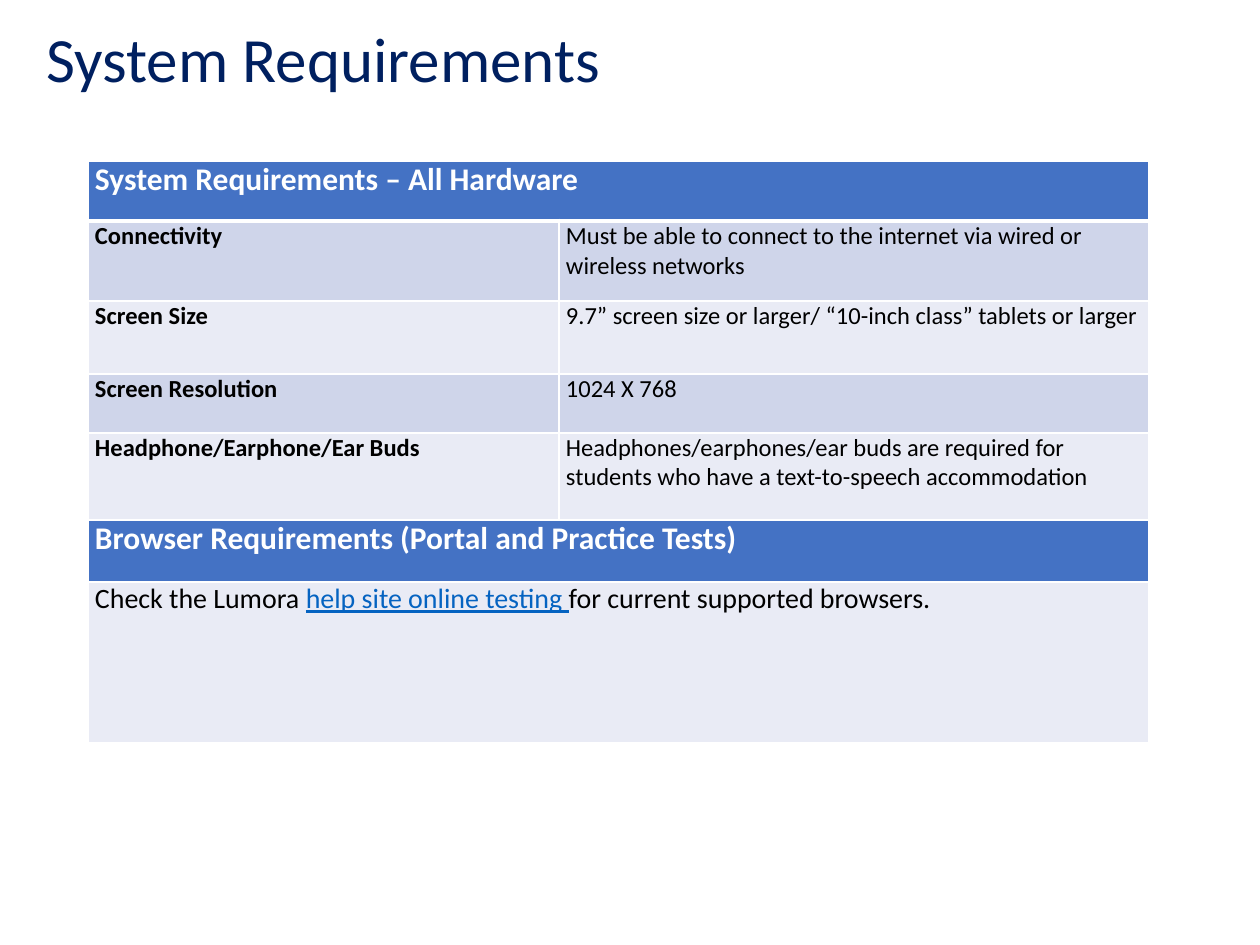
from lxml import etree
from pptx import Presentation
from pptx.dml.color import RGBColor
from pptx.oxml.ns import qn
from pptx.util import Emu, Pt

PX = 914400 // 126
FONT = "Calibri"
COLORS = {
    "navy": "002060", "head": "4472C4", "dark": "CFD5EA", "light": "E9EBF5",
    "white": "FFFFFF", "black": "000000", "link": "0563C1",
}

TITLE = "System Requirements"
HEAD = dict(size=18, color="white", bold=True)
LABEL = dict(size=14, bold=True)
VALUE = dict(size=14)
NOTE = dict(size=16)
LINK = dict(size=16, color="link", under=True)

# Each row: height, fill, cells; each cell is a list of (text, format) runs.
ROWS = [
    (60, "head", [[("System Requirements – All Hardware", HEAD)]]),
    (80, "dark", [[("Connectivity", LABEL)],
                  [("Must be able to connect to the internet via wired or "
                    "wireless networks", VALUE)]]),
    (73, "light", [[("Screen Size", LABEL)],
                   [("9.7” screen size or larger/ “10-inch class” tablets "
                     "or larger", VALUE)]]),
    (59, "dark", [[("Screen Resolution", LABEL)], [("1024 X 768", VALUE)]]),
    (87, "light", [[("Headphone/Earphone/Ear Buds", LABEL)],
                   [("Headphones/earphones/ear buds are required for students "
                     "who have a text-to-speech accommodation", VALUE)]]),
    (62, "head", [[("Browser Requirements (Portal and Practice Tests)", HEAD)]]),
    (161, "light", [[("Check the Lumora ", NOTE),
                     ("help site online testing ", LINK),
                     ("for current supported browsers.", NOTE)]]),
]
COLS = [471, 590]


def px(num):
    return Emu(num * PX)


def rgb(name):
    return RGBColor.from_string(COLORS[name])


def write(para, text, size=14, color="black", bold=False, under=False):
    run = para.add_run()
    run.text = text
    font = run.font
    font.name, font.size = FONT, Pt(size)
    font.bold, font.underline = bold, under
    font.color.rgb = rgb(color)


def edge(cell, widths):
    """Draw white borders, given widths in points for left, right, top, bottom."""
    props = cell._tc.get_or_add_tcPr()
    for spot, (side, width) in enumerate(zip("LRTB", widths)):
        line = etree.Element(qn(f"a:ln{side}"), w=str(Pt(width)))
        fill = etree.SubElement(line, qn("a:solidFill"))
        etree.SubElement(fill, qn("a:srgbClr"), val=COLORS["white"])
        props.insert(spot, line)


def add_title(slide):
    box = slide.shapes.add_textbox(px(34), px(13), px(966), px(89))
    box.text_frame.word_wrap = True
    write(box.text_frame.paragraphs[0], TITLE, size=36, color="navy")


def add_grid(slide):
    high = sum(row[0] for row in ROWS)
    table = slide.shapes.add_table(len(ROWS), len(COLS), px(88), px(161),
                                   px(sum(COLS)), px(high)).table
    for col, width in zip(table.columns, COLS):
        col.width = px(width)
    for r, (height, fill, texts) in enumerate(ROWS):
        table.rows[r].height = px(height)
        cells = [table.cell(r, c) for c in range(len(COLS))]
        if len(texts) == 1:
            cells[0].merge(cells[-1])
        for cell in cells:
            cell.fill.solid()
            cell.fill.fore_color.rgb = rgb(fill)
            cell.margin_left = cell.margin_right = px(7)
            cell.margin_top = cell.margin_bottom = 0
            edge(cell, (1, 1, 3 if r == 1 else 1, 3 if r == 0 else 1))
        for cell, runs in zip(cells, texts):
            for text, style in runs:
                write(cell.text_frame.paragraphs[0], text, **style)


def main():
    deck = Presentation()
    deck.slide_width, deck.slide_height = px(1260), px(945)
    slide = deck.slides.add_slide(deck.slide_layouts[6])
    add_grid(slide)
    add_title(slide)
    deck.save("out.pptx")


if __name__ == "__main__":
    main()
